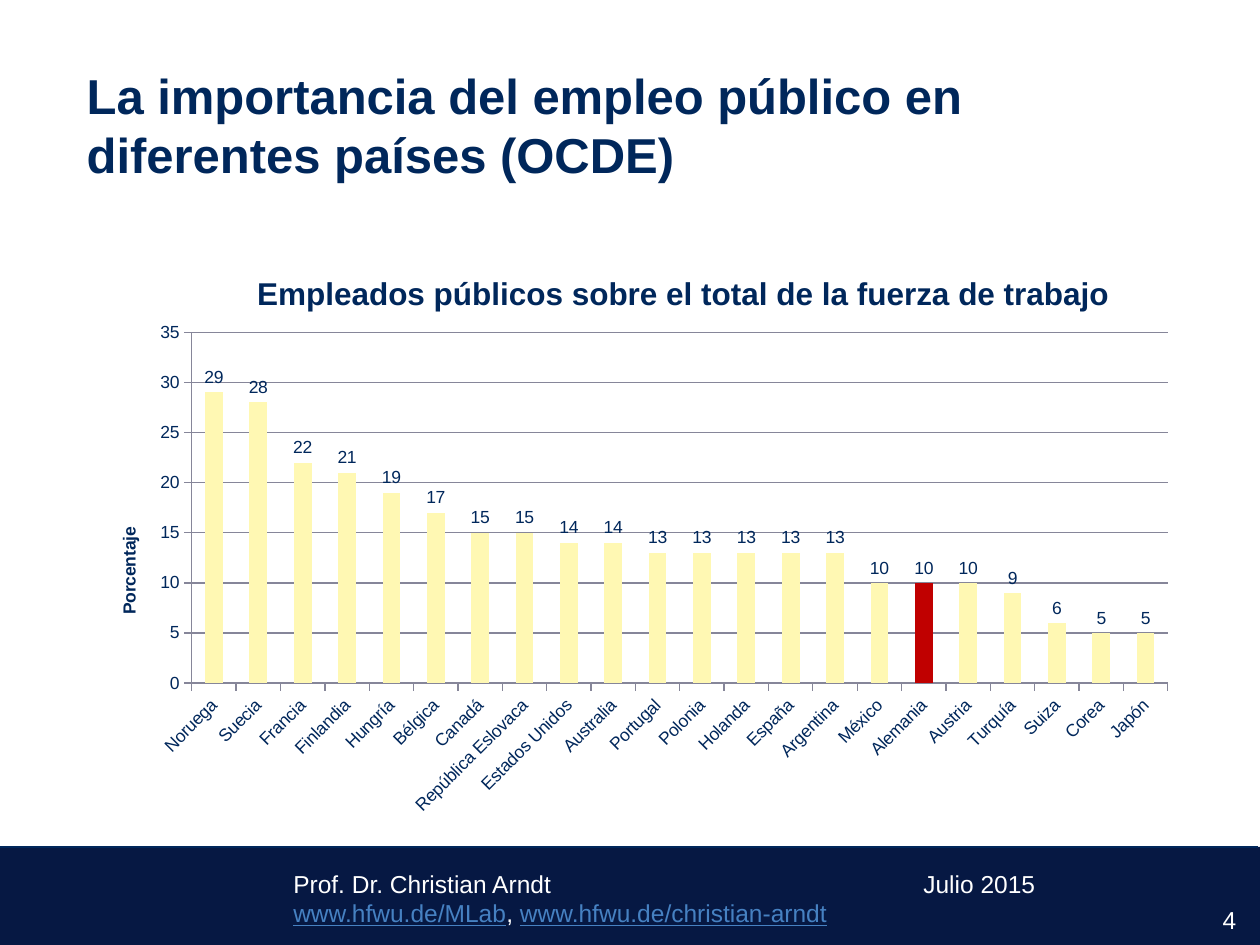
from lxml import etree
from pptx import Presentation
from pptx import util as u
from pptx.chart.data import CategoryChartData
from pptx.dml.color import RGBColor
from pptx.enum import chart as charts, shapes, text
from pptx.oxml import ns

COLORS = {"navy": "00275B", "footer": "061843", "white": "FFFFFF", "link": "4681C2",
          "bar": "FFF8B3", "highlight": "C00000", "grid": "868699"}
EMPLOYMENT = {
    "Noruega": 29, "Suecia": 28, "Francia": 22, "Finlandia": 21, "Hungría": 19,
    "Bélgica": 17, "Canadá": 15, "República Eslovaca": 15, "Estados Unidos": 14,
    "Australia": 14, "Portugal": 13, "Polonia": 13, "Holanda": 13, "España": 13,
    "Argentina": 13, "México": 10, "Alemania": 10, "Austria": 10, "Turquía": 9,
    "Suiza": 6, "Corea": 5, "Japón": 5,
}


class SlideBuilder:
    font_name = "Arial"

    def __init__(self, slide):
        self.slide = slide

    def color(self, name):
        return RGBColor.from_string(COLORS[name])

    def style(self, font, size, color, bold=False):
        font.name, font.size, font.bold = self.font_name, u.Pt(size), bold
        font.color.rgb = self.color(color)

    def rectangle(self, box, color):
        shape = self.slide.shapes.add_shape(shapes.MSO_SHAPE.RECTANGLE, *map(u.Pt, box))
        shape.shadow.inherit = False
        shape.fill.solid()
        shape.fill.fore_color.rgb = self.color(color)
        shape.line.fill.background()

    def line(self, ends, color, width):
        connector = self.slide.shapes.add_connector(
            shapes.MSO_CONNECTOR.STRAIGHT, *map(u.Pt, ends))
        connector.line.color.rgb = self.color(color)
        connector.line.width = u.Pt(width)
        etree.SubElement(connector._element.spPr, ns.qn("a:effectLst"))

    def textbox(self, box, paragraphs, size, color, bold=False,
                align=text.PP_ALIGN.LEFT, anchor=text.MSO_ANCHOR.TOP, tab=None):
        frame = self.slide.shapes.add_textbox(*map(u.Pt, box)).text_frame
        frame.word_wrap = True
        frame.vertical_anchor = anchor
        for index, runs in enumerate(paragraphs):
            paragraph = frame.add_paragraph() if index else frame.paragraphs[0]
            paragraph.alignment = align
            if tab:
                tabs = etree.SubElement(paragraph._p.get_or_add_pPr(), ns.qn("a:tabLst"))
                etree.SubElement(tabs, ns.qn("a:tab"), pos=str(u.Pt(tab)), algn="l")
            for content, is_link in runs:
                run = paragraph.add_run()
                run.text = content
                self.style(run.font, size, "link" if is_link else color, bold)
                run.font.underline = is_link

    def layout(self, parent, index, **values):
        for old in parent.findall(ns.qn("c:layout")):
            parent.remove(old)
        layout = etree.Element(ns.qn("c:layout"))
        manual = etree.SubElement(layout, ns.qn("c:manualLayout"))
        if "w" in values:
            etree.SubElement(manual, ns.qn("c:layoutTarget"), val="inner")
        for mode in ("xMode", "yMode"):
            etree.SubElement(manual, ns.qn(f"c:{mode}"), val="edge")
        for key, value in values.items():
            etree.SubElement(manual, ns.qn(f"c:{key}"), val=str(value))
        parent.insert(index, layout)

    def chart_title(self, title, content, size, x, y):
        title.text_frame.text = content
        self.style(title.text_frame.paragraphs[0].runs[0].font, size, "navy", True)
        self.layout(title._element, 1, x=x, y=y)

    def column_chart(self, box, title, axis_title, values, highlighted):
        data = CategoryChartData()
        data.categories = list(values)
        data.add_series("Series 1", list(values.values()))
        chart = self.slide.shapes.add_chart(
            charts.XL_CHART_TYPE.COLUMN_CLUSTERED, *map(u.Pt, box), data).chart
        self.style(chart.font, 10, "navy")
        chart.has_legend = False
        chart.has_title = True
        self.chart_title(chart.chart_title, title, 18, 0.15, 0.05)
        self.layout(chart._chartSpace.chart.plotArea, 0, x=0.096, y=0.16, w=0.884, h=0.595)

        plot = chart.plots[0]
        plot.vary_by_categories = False
        plot.gap_width = 150
        series = plot.series[0]
        points = [(series, "bar"), (series.points[list(values).index(highlighted)], "highlight")]
        for target, color in points:
            target.format.fill.solid()
            target.format.fill.fore_color.rgb = self.color(color)
        labels = series.data_labels
        labels.show_value = True
        labels.position = charts.XL_LABEL_POSITION.OUTSIDE_END
        self.style(labels.font, 10, "navy")

        value_axis, category_axis = chart.value_axis, chart.category_axis
        value_axis.minimum_scale, value_axis.maximum_scale = 0, 35
        value_axis.major_unit = 5
        value_axis.has_major_gridlines = True
        value_axis.has_title = True
        self.chart_title(value_axis.axis_title, axis_title, 10, 0.026, 0.485)
        for axis in (value_axis, category_axis):
            axis.major_tick_mark = charts.XL_TICK_MARK.OUTSIDE
            self.style(axis.tick_labels.font, 10, "navy")
        for item in (value_axis, category_axis, value_axis.major_gridlines):
            item.format.line.color.rgb = self.color("grid")
            item.format.line.width = u.Pt(0.75)
        body = category_axis._element.find(ns.qn("c:txPr")).find(ns.qn("a:bodyPr"))
        body.set("rot", "-2700000")
        body.set("vert", "horz")


def main():
    presentation = Presentation()
    presentation.slide_width, presentation.slide_height = u.Pt(720), u.Pt(540)
    builder = SlideBuilder(presentation.slides.add_slide(presentation.slide_layouts[6]))

    builder.rectangle((-2, 484, 722, 57.5), "footer")
    builder.line((-1, 484, 719, 484), "navy", 0.75)
    builder.textbox((160.5, 493, 466, 41), [
        [("Prof. Dr. Christian Arndt \tJulio 2015", False)],
        [("www.hfwu.de/MLab", True), (", ", False), ("www.hfwu.de/christian-arndt", True)],
    ], 14, "white", tab=360)
    builder.textbox((42.5, 36, 637, 70.5), [
        [("La importancia del empleo público en diferentes países (OCDE)", False)],
    ], 28, "navy", bold=True, anchor=text.MSO_ANCHOR.MIDDLE)
    builder.textbox((667.5, 513.5, 46, 26.5), [[("4", False)]], 14, "white",
                    align=text.PP_ALIGN.RIGHT)
    builder.column_chart((49, 136, 631, 337),
                         "Empleados públicos sobre el total de la fuerza de trabajo",
                         "Porcentaje", EMPLOYMENT, "Alemania")
    presentation.save("out.pptx")


if __name__ == "__main__":
    main()
